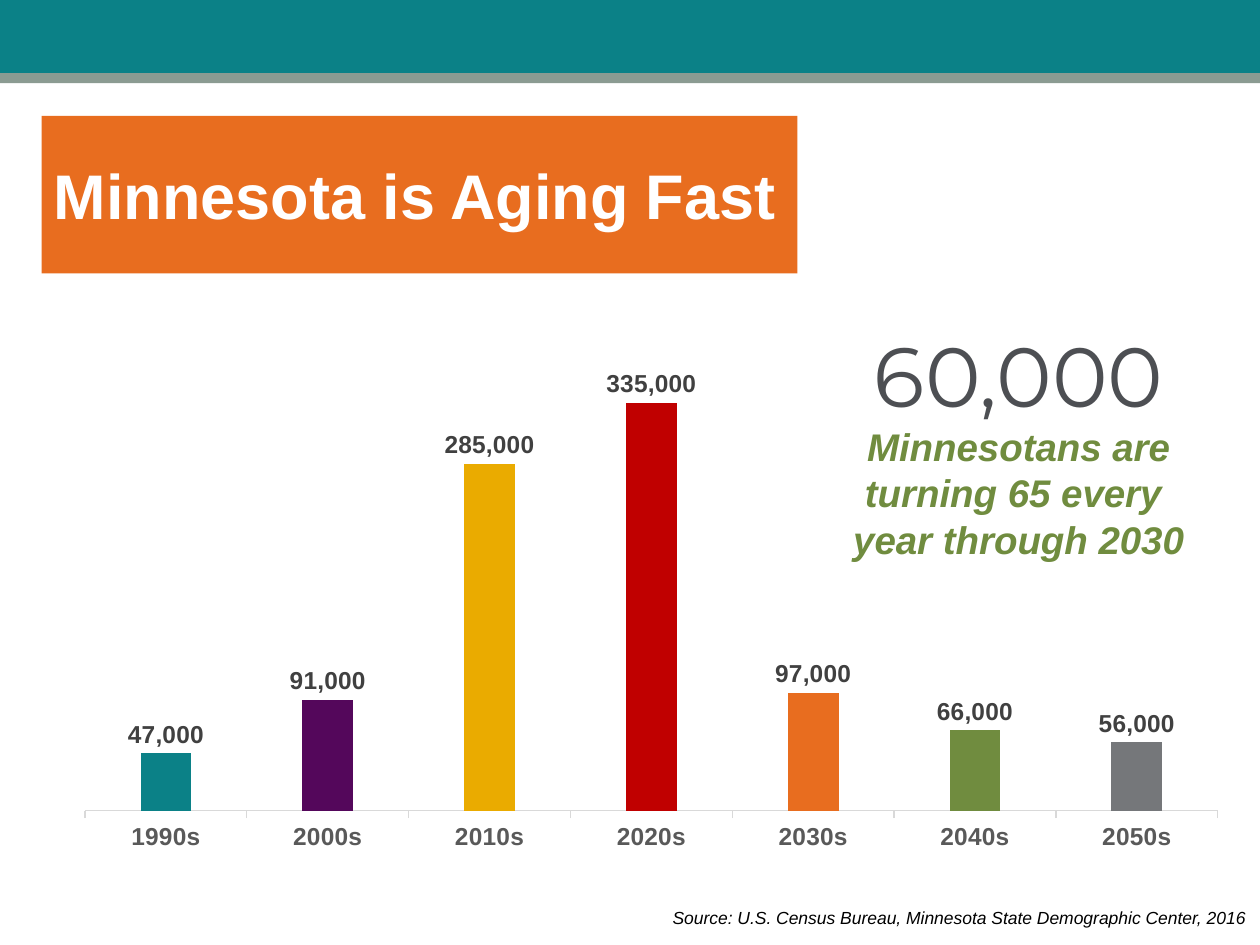
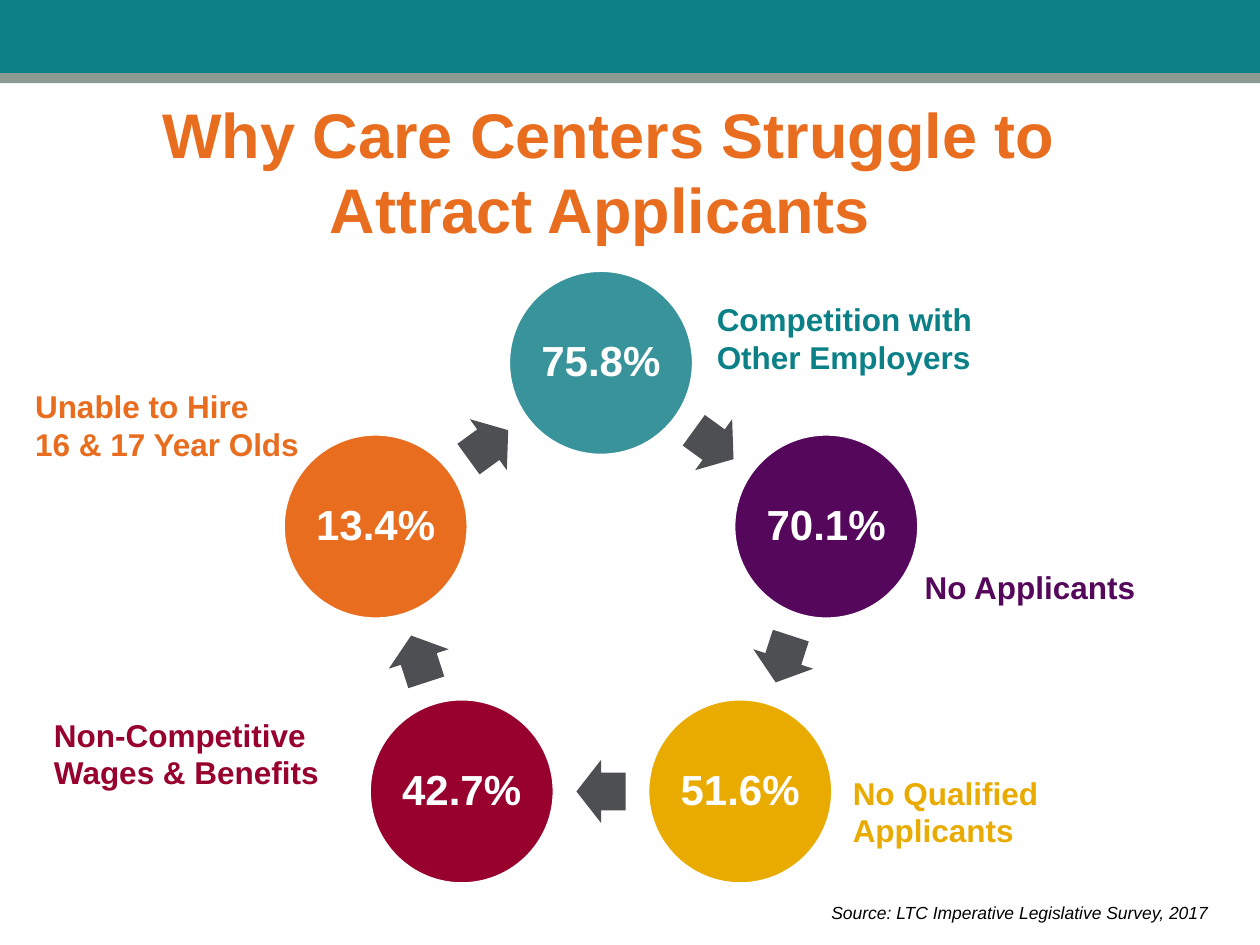
import math

import lxml.etree
import pptx
import pptx.chart.data
import pptx.dml.color
import pptx.enum.chart
import pptx.enum.shapes
import pptx.enum.text
import pptx.oxml
import pptx.oxml.ns
import pptx.util

Inches = pptx.util.Inches
Pt = pptx.util.Pt
ALIGN = pptx.enum.text.PP_ALIGN
ANCHOR = pptx.enum.text.MSO_ANCHOR
SHAPE = pptx.enum.shapes.MSO_SHAPE

TEAL, SAGE, ORANGE, PURPLE = "0B8187", "8B9B92", "E86D1F", "54075B"
GOLD, RED, GREEN, GRAY = "EAAB00", "C00000", "708C3F", "75777A"
CRIMSON, LIGHT_TEAL, CHARCOAL, WHITE = "98002E", "38939B", "4D4F53", "FFFFFF"

TITLE = {"size": Pt(36), "bold": True}
CALLOUT = {"size": Pt(22), "bold": True, "italic": True}
LABEL = {"size": Pt(18), "bold": True}
PERCENT = {"size": Pt(24), "bold": True}
CHART_TEXT = {"size": Pt(14), "bold": True, "name": "Arial"}
SOURCE = {"size": Pt(10), "italic": True}


def paint(target, color):
    """Give a fill or a font one solid colour."""
    if hasattr(target, "solid"):
        target.solid()
        target.fore_color.rgb = pptx.dml.color.RGBColor.from_string(color)
    else:
        target.color.rgb = pptx.dml.color.RGBColor.from_string(color)


def write(shape, lines, color, formats, align=ALIGN.LEFT, anchor=ANCHOR.TOP):
    """Fill a shape with one paragraph per line, all in one style."""
    frame = shape.text_frame
    frame.word_wrap = True
    frame.vertical_anchor = anchor
    frame.text = "\n".join(lines)
    for paragraph in frame.paragraphs:
        paragraph.alignment = align
        for name, value in {"name": "Arial", **formats}.items():
            setattr(paragraph.font, name, value)
        paint(paragraph.font, color)


presentation = pptx.Presentation()
presentation.slide_width = Inches(10)
presentation.slide_height = Inches(7.5)

slides = []
for number in range(2):
    slide = presentation.slides.add_slide(presentation.slide_layouts[6])
    for top, height, color in [(0, 0.58, TEAL), (0.58, 0.08, SAGE)]:
        band = slide.shapes.add_shape(
            SHAPE.RECTANGLE, 0, Inches(top), Inches(10), Inches(height))
        band.shadow.inherit = False
        band.line.fill.background()
        paint(band.fill, color)
    slides.append(slide)
aging, applicants = slides

# Slide 1: people turning 65 by decade
decades = {
    "1990s": (47000, TEAL),
    "2000s": (91000, PURPLE),
    "2010s": (285000, GOLD),
    "2020s": (335000, RED),
    "2030s": (97000, ORANGE),
    "2040s": (66000, GREEN),
    "2050s": (56000, GRAY),
}
chart_data = pptx.chart.data.CategoryChartData(number_format="#,##0")
chart_data.categories = list(decades)
chart_data.add_series("Series 1", [value for value, color in decades.values()])
chart = aging.shapes.add_chart(
    pptx.enum.chart.XL_CHART_TYPE.COLUMN_CLUSTERED,
    Inches(0.67), Inches(2.54), Inches(9), Inches(4.54), chart_data).chart
chart.has_legend = False
chart.has_title = False
chart.font.size = Pt(10)
chart.font.name = "Arial"

value_axis = chart.value_axis
value_axis.minimum_scale = 0
value_axis.maximum_scale = 400000
value_axis.has_major_gridlines = False
value_axis.visible = False
category_axis = chart.category_axis
category_axis.major_tick_mark = pptx.enum.chart.XL_TICK_MARK.OUTSIDE
category_axis.format.line.width = Pt(0.75)
paint(category_axis.format.line.fill, "D9D9D9")

plot = chart.plots[0]
plot.gap_width = 219
plot.overlap = -27
plot.vary_by_categories = False
plot.has_data_labels = True
labels = plot.data_labels
labels.show_value = True
labels.number_format = "#,##0"
labels.number_format_is_linked = False
labels.position = pptx.enum.chart.XL_LABEL_POSITION.OUTSIDE_END
for font, color in [(labels.font, "404040"), (category_axis.tick_labels.font, "595959")]:
    for name, value in CHART_TEXT.items():
        setattr(font, name, value)
    paint(font, color)

series = plot.series[0]
paint(series.format.fill, "B4CC95")
for index, (value, color) in enumerate(decades.values()):
    paint(series.points[index].format.fill, color)

plot_area = chart._chartSpace.chart.plotArea
for old_layout in plot_area.findall(pptx.oxml.ns.qn("c:layout")):
    plot_area.remove(old_layout)
layout = lxml.etree.Element(pptx.oxml.ns.qn("c:layout"))
manual = lxml.etree.SubElement(layout, pptx.oxml.ns.qn("c:manualLayout"))
for tag, value in [("layoutTarget", "inner"), ("xMode", "edge"), ("yMode", "edge"),
                   ("x", "0"), ("y", "0.006"), ("w", "1"), ("h", "0.852")]:
    lxml.etree.SubElement(manual, pptx.oxml.ns.qn("c:" + tag)).set("val", value)
plot_area.insert(0, layout)

title = aging.shapes.add_textbox(Inches(0.33), Inches(0.92), Inches(6), Inches(1.25))
paint(title.fill, ORANGE)
write(title, ["Minnesota is Aging Fast"], WHITE, TITLE, anchor=ANCHOR.MIDDLE)

# Slide 2: ring of reasons, clockwise from the top
reasons = [("75.8%", LIGHT_TEAL), ("70.1%", PURPLE), ("51.6%", GOLD),
           ("42.7%", CRIMSON), ("13.4%", ORANGE)]
center_x, center_y, ring_radius = 4.77, 4.76, 1.88
diameter = 1.47
arrow_length, arrow_width = 0.39, 0.5
step = 360 / len(reasons)
arrow_radius = ring_radius * math.cos(math.radians(step / 2))

for index, (percent, color) in enumerate(reasons):
    angle = math.radians(index * step)
    circle = applicants.shapes.add_shape(
        SHAPE.OVAL,
        Inches(center_x + ring_radius * math.sin(angle) - diameter / 2),
        Inches(center_y - ring_radius * math.cos(angle) - diameter / 2),
        Inches(diameter), Inches(diameter))
    circle.shadow.inherit = False
    paint(circle.fill, color)
    paint(circle.line.fill, WHITE)
    circle.line.width = Pt(2)
    write(circle, [percent], WHITE, PERCENT, ALIGN.CENTER, ANCHOR.MIDDLE)
    circle.text_frame.margin_left = circle.text_frame.margin_right = 0
    circle.text_frame.paragraphs[0].line_spacing = 0.9

    angle = math.radians((index + 0.5) * step)
    arrow = applicants.shapes.add_shape(
        SHAPE.RIGHT_ARROW,
        Inches(center_x + arrow_radius * math.sin(angle) - arrow_length / 2),
        Inches(center_y - arrow_radius * math.cos(angle) - arrow_width / 2),
        Inches(arrow_length), Inches(arrow_width))
    arrow.adjustments[0] = 0.6
    arrow.adjustments[1] = 0.5
    arrow.rotation = (index + 0.5) * step
    arrow.shadow.inherit = False
    arrow.line.fill.background()
    paint(arrow.fill, CHARCOAL)

# Text of both slides: slide, box, lines, colour, format, alignment
texts = [
    (aging, (6.67, 2.52, 2.83, 0.91), ["60,000"], CHARCOAL,
     {"size": Pt(48), "name": "Montserrat"}, ALIGN.CENTER),
    (aging, (6.46, 3.31, 3.25, 1.21),
     ["Minnesotans are turning 65 every ", "year through 2030"],
     GREEN, CALLOUT, ALIGN.CENTER),
    (aging, (4.56, 7.15, 5.42, 0.27),
     ["Source: U.S. Census Bureau, Minnesota State Demographic Center, 2016"],
     "000000", SOURCE, ALIGN.RIGHT),
    (applicants, (0.33, 0.73, 9, 1.25),
     ["Why Care Centers Struggle to Attract Applicants "], ORANGE, TITLE, ALIGN.CENTER),
    (applicants, (5.59, 2.33, 2.75, 0.71),
     ["Competition with Other Employers"], TEAL, LABEL, ALIGN.LEFT),
    (applicants, (7.24, 4.46, 2.12, 0.4), ["No Applicants"], PURPLE, LABEL, ALIGN.LEFT),
    (applicants, (6.67, 6.09, 2.04, 0.71),
     ["No Qualified", "Applicants"], GOLD, LABEL, ALIGN.LEFT),
    (applicants, (0.33, 5.63, 2.58, 0.71),
     ["Non-Competitive Wages & Benefits"], CRIMSON, LABEL, ALIGN.LEFT),
    (applicants, (0.18, 3.02, 2.32, 0.71),
     ["Unable to Hire", "16 & 17 Year Olds"], ORANGE, LABEL, ALIGN.LEFT),
    (applicants, (6.5, 7.11, 3.26, 0.31),
     ["Source: LTC Imperative Legislative Survey, 2017"], "000000", SOURCE, ALIGN.LEFT),
]
for slide, box, lines, color, formats, align in texts:
    text_box = slide.shapes.add_textbox(*[Inches(length) for length in box])
    anchor = ANCHOR.MIDDLE if formats is TITLE else ANCHOR.TOP
    write(text_box, lines, color, formats, align, anchor)

presentation.save("out.pptx")
